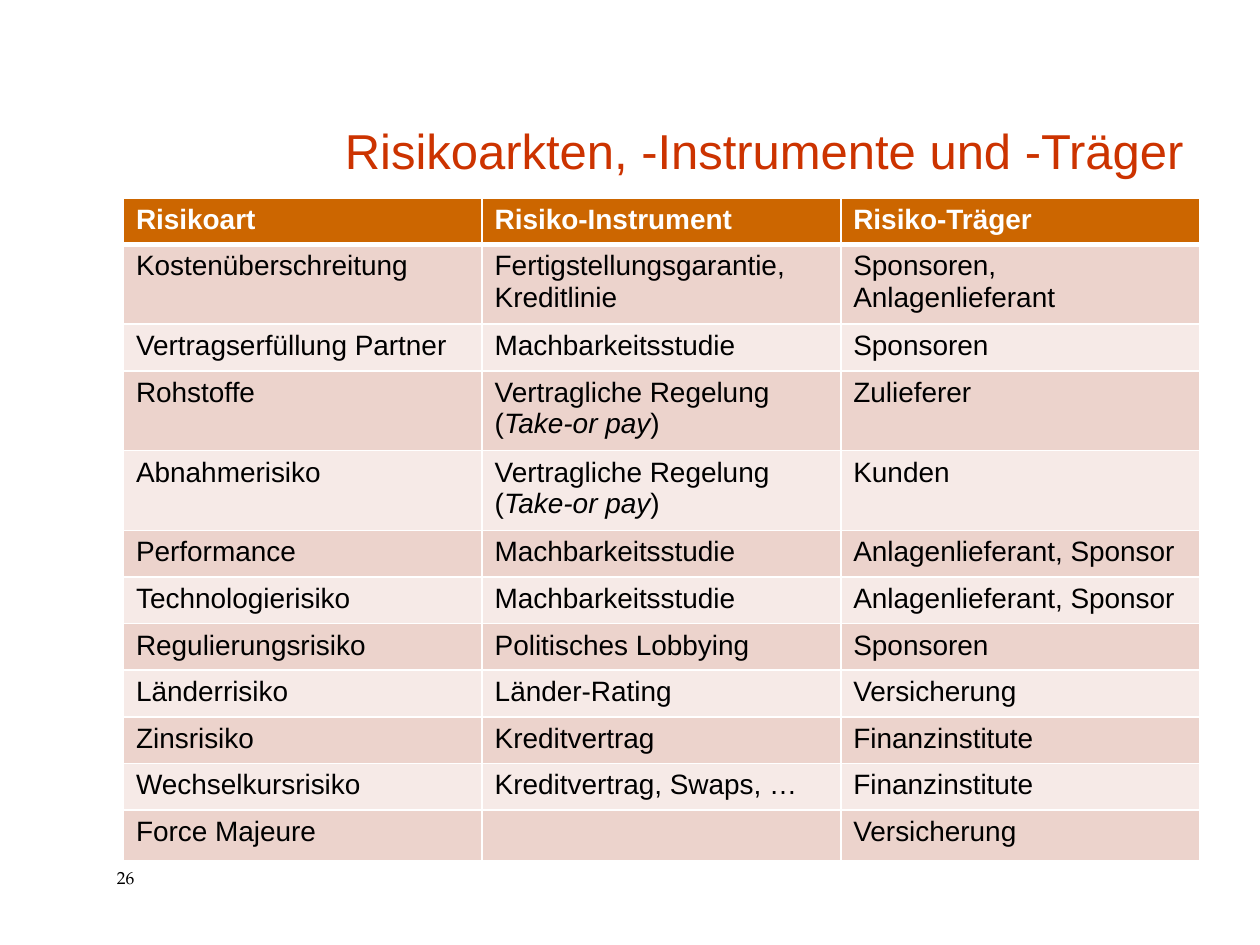
from pptx import Presentation
from pptx.dml.color import RGBColor
from pptx.enum.text import MSO_ANCHOR, PP_ALIGN
from pptx.oxml import parse_xml
from pptx.oxml.ns import nsdecls
from pptx.util import Inches, Pt

RED = RGBColor(0xCC, 0x33, 0x00)
ORANGE = RGBColor(0xCC, 0x66, 0x00)
ROSE = RGBColor(0xEC, 0xD3, 0xCC)
PALE = RGBColor(0xF6, 0xEA, 0xE7)
WHITE = RGBColor(0xFF, 0xFF, 0xFF)
BLACK = RGBColor(0x00, 0x00, 0x00)

# Text between asterisks is set in italics
RISKS = [
    ("Risikoart", "Risiko-Instrument", "Risiko-Träger"),
    ("Kostenüberschreitung", "Fertigstellungsgarantie, Kreditlinie",
     "Sponsoren, Anlagenlieferant"),
    ("Vertragserfüllung Partner", "Machbarkeitsstudie", "Sponsoren"),
    ("Rohstoffe", "Vertragliche Regelung (*Take-or pay*)", "Zulieferer"),
    ("Abnahmerisiko", "Vertragliche Regelung (*Take-or pay*)", "Kunden"),
    ("Performance", "Machbarkeitsstudie", "Anlagenlieferant, Sponsor"),
    ("Technologierisiko", "Machbarkeitsstudie", "Anlagenlieferant, Sponsor"),
    ("Regulierungsrisiko", "Politisches Lobbying", "Sponsoren"),
    ("Länderrisiko", "Länder-Rating", "Versicherung"),
    ("Zinsrisiko", "Kreditvertrag", "Finanzinstitute"),
    ("Wechselkursrisiko", "Kreditvertrag, Swaps, …", "Finanzinstitute"),
    ("Force Majeure", "", "Versicherung"),
]
TWO_LINE_ROWS = (1, 3, 4)


def add_run(p, text, size, color, font="Arial", bold=False, italic=False):
    r = p.add_run()
    r.text = text
    r.font.name, r.font.size = font, Pt(size)
    r.font.bold, r.font.italic = bold, italic
    r.font.color.rgb = color


def add_text(s, box, text, size, color, font="Arial",
             align=PP_ALIGN.LEFT, anchor=MSO_ANCHOR.TOP):
    tf = s.shapes.add_textbox(*box).text_frame
    tf.word_wrap = True
    tf.vertical_anchor = anchor
    p = tf.paragraphs[0]
    p.alignment = align
    add_run(p, text, size, color, font)


def set_borders(cell, bottom):
    tcPr = cell._tc.get_or_add_tcPr()
    sides = (("lnL", 1), ("lnR", 1), ("lnT", 1), ("lnB", bottom))
    for i, (side, width) in enumerate(sides):
        # Border lines must come before the fill
        tcPr.insert(i, parse_xml(
            f'<a:{side} {nsdecls("a")} w="{Pt(width)}"><a:solidFill>'
            f'<a:srgbClr val="{WHITE}"/></a:solidFill></a:{side}>'))


def add_risk_table(s, left, top, width):
    table = s.shapes.add_table(len(RISKS), len(RISKS[0]), left, top,
                               width, Inches(5.2)).table
    for column in table.columns:
        column.width = width // len(RISKS[0])
    for i, row in enumerate(RISKS):
        header = i == 0
        table.rows[i].height = Inches(0.63 if i in TWO_LINE_ROWS else 0.37)
        fill = ORANGE if header else (ROSE if i % 2 else PALE)
        for j, text in enumerate(row):
            cell = table.cell(i, j)
            cell.fill.solid()
            cell.fill.fore_color.rgb = fill
            # The header has a thick rule below it
            set_borders(cell, 3 if header else 1)
            if i == 1:
                cell._tc.tcPr[2].set("w", str(Pt(3)))
            p = cell.text_frame.paragraphs[0]
            for k, part in enumerate(text.split("*")):
                add_run(p, part, 16, WHITE if header else BLACK,
                        bold=header, italic=k % 2 == 1)


def main():
    prs = Presentation()
    prs.slide_width, prs.slide_height = Inches(10), Inches(7.5)
    s = prs.slides.add_slide(prs.slide_layouts[6])

    # Page number
    add_text(s, (Inches(0.83), Inches(6.83), Inches(0.67), Inches(0.27)),
             "26", 10, BLACK, "TeX Gyre Pagella")
    # Title
    add_text(s, (Inches(2.09), Inches(0.42), Inches(7.4), Inches(1.05)),
             "Risikoarkten, -Instrumente und -Träger", 28, RED,
             align=PP_ALIGN.RIGHT, anchor=MSO_ANCHOR.BOTTOM)
    # Risk table
    add_risk_table(s, Inches(0.98), Inches(1.57), Inches(8.54))

    prs.save("out.pptx")


if __name__ == "__main__":
    main()
